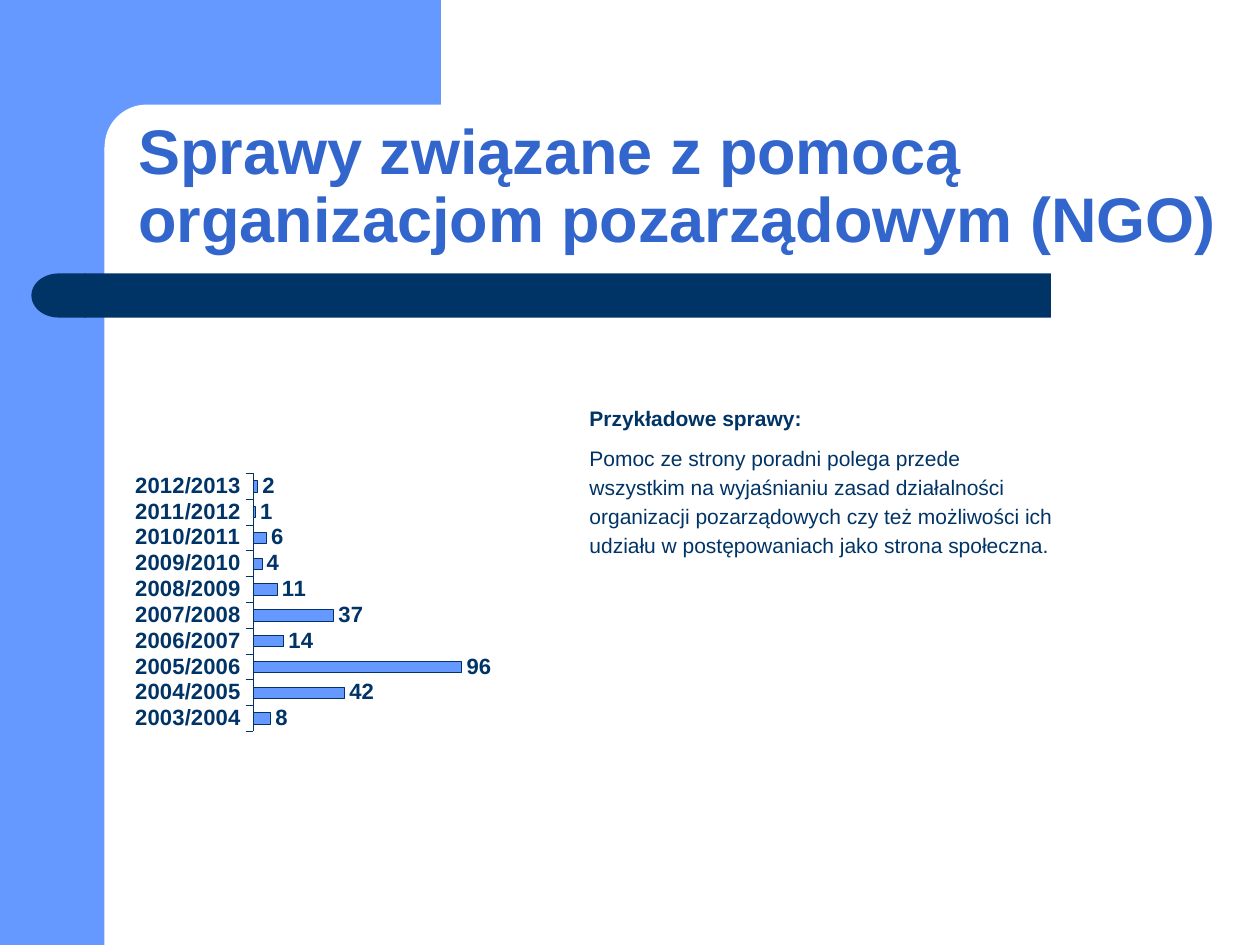
from dataclasses import dataclass

from lxml import etree
from pptx import Presentation
from pptx import util as u
from pptx.chart.data import CategoryChartData
from pptx.dml.color import RGBColor
from pptx.enum import chart as charts, shapes, text
from pptx.oxml import parse_xml
from pptx.oxml.ns import nsdecls

SKY = RGBColor(0x66, 0x99, 0xFF)
NAVY = RGBColor(0x00, 0x33, 0x66)
BLUE = RGBColor(0x33, 0x66, 0xCC)
WHITE = RGBColor(0xFF, 0xFF, 0xFF)
FONT = "Arial"
TITLE = "Sprawy związane z pomocą organizacjom pozarządowym (NGO)"
EXAMPLES_HEADING = "Przykładowe sprawy:"
EXAMPLES = (
    "Pomoc ze strony poradni polega przede wszystkim na wyjaśnianiu zasad "
    "działalności organizacji pozarządowych czy też możliwości ich udziału "
    "w postępowaniach jako strona społeczna."
)
FIRST_YEAR = 2003
CASES = (8, 42, 96, 14, 37, 11, 4, 6, 1, 2)


@dataclass(frozen=True)
class Panel:
    """A plain filled shape of the background."""

    kind: shapes.MSO_SHAPE
    box: tuple[float, float, float, float]
    color: RGBColor
    corner: float | None = None
    mirrored: bool = False


PANELS = (
    Panel(shapes.MSO_SHAPE.RECTANGLE, (0, 0, 0.83, 7.5), SKY),
    Panel(shapes.MSO_SHAPE.RECTANGLE, (0.75, 0, 2.75, 1.17), SKY),
    Panel(shapes.MSO_SHAPE.ROUNDED_RECTANGLE, (0.83, 0.83, 5.58, 0.67), WHITE, corner=0.5),
    Panel(shapes.MSO_SHAPE.ROUNDED_RECTANGLE, (0.67, 2.17, 7.67, 0.35), NAVY, corner=0),
    Panel(shapes.MSO_SHAPE.FLOWCHART_DELAY, (0.25, 2.17, 0.43, 0.35), NAVY, mirrored=True),
)


def inches(box: tuple[float, float, float, float]) -> list[u.Length]:
    """Turn left, top, width and height into lengths."""
    return [u.Inches(value) for value in box]


def style(font, size: float, color: RGBColor, bold: bool) -> None:
    """Set the look of a font."""
    font.name, font.size, font.bold = FONT, u.Pt(size), bold
    font.color.rgb = color


def draw_panel(slide, panel: Panel) -> None:
    """Draw one background shape."""
    shape = slide.shapes.add_shape(panel.kind, *inches(panel.box))
    shape.shadow.inherit = False
    shape.fill.solid()
    shape.fill.fore_color.rgb = panel.color
    shape.line.fill.background()
    if panel.corner is not None:
        shape.adjustments[0] = panel.corner
    if panel.mirrored:
        shape.element.spPr.xfrm.set("flipH", "1")


def draw_title(slide) -> None:
    """Draw the slide heading."""
    frame = slide.shapes.add_textbox(*inches((1, 0.83, 9, 1.25))).text_frame
    frame.word_wrap = True
    frame.vertical_anchor = text.MSO_ANCHOR.BOTTOM
    frame.text = TITLE
    para = frame.paragraphs[0]
    para.line_spacing = 0.9
    style(para.runs[0].font, 36, BLUE, True)


def draw_examples(slide) -> None:
    """Draw the text beside the chart."""
    frame = slide.shapes.add_textbox(*inches((4.58, 3.17, 3.88, 1.29))).text_frame
    frame.word_wrap = True
    frame.text = EXAMPLES_HEADING
    style(frame.paragraphs[0].runs[0].font, 12, NAVY, True)
    para = frame.add_paragraph()
    para.text = EXAMPLES
    para.line_spacing = 1.15
    para.space_before = u.Pt(6)
    style(para.runs[0].font, 12, NAVY, False)


def place_plot(chart, box: tuple[float, float, float, float]) -> None:
    """Fix the inner plot area as fractions of the chart."""
    layout = parse_xml(
        f'<c:layout {nsdecls("c")}><c:manualLayout><c:layoutTarget val="inner"/>'
        '<c:xMode val="edge"/><c:yMode val="edge"/></c:manualLayout></c:layout>'
    )
    manual = layout[0]
    for name, value in zip("xywh", box):
        etree.SubElement(manual, f"{{{manual.nsmap['c']}}}{name}").set("val", str(value))
    area = chart.element.chart.plotArea
    for old in area.findall(layout.tag):
        area.remove(old)
    area.insert(0, layout)


def draw_chart(slide) -> None:
    """Draw the yearly number of cases."""
    data = CategoryChartData()
    data.categories = [f"{year}/{year + 1}" for year in range(FIRST_YEAR, FIRST_YEAR + len(CASES))]
    data.add_series("Series 1", CASES)
    chart = slide.shapes.add_chart(
        charts.XL_CHART_TYPE.BAR_CLUSTERED, *inches((0.99, 3.57, 3.6, 2.39)), data
    ).chart
    chart.has_legend = chart.has_title = False
    style(chart.font, 12.6, NAVY, True)
    place_plot(chart, (0.283, 0.078, 0.575, 0.857))

    values = chart.value_axis
    values.visible = values.has_major_gridlines = False
    values.minimum_scale, values.maximum_scale = 0, 120
    years = chart.category_axis
    years.major_tick_mark = charts.XL_TICK_MARK.OUTSIDE
    years.format.line.color.rgb = NAVY
    years.format.line.width = u.Pt(0.18)
    style(years.tick_labels.font, 12.6, NAVY, True)

    plot = chart.plots[0]
    plot.vary_by_categories = False
    plot.gap_width = 130
    bars = plot.series[0]
    bars.format.fill.solid()
    bars.format.fill.fore_color.rgb = SKY
    bars.format.line.color.rgb = NAVY
    bars.format.line.width = u.Pt(0.25)
    labels = bars.data_labels
    labels.show_value = True
    labels.position = charts.XL_LABEL_POSITION.OUTSIDE_END
    style(labels.font, 12.6, NAVY, True)


def main() -> None:
    """Build and save the deck."""
    deck = Presentation()
    deck.slide_width, deck.slide_height = u.Inches(10), u.Inches(7.5)
    slide = deck.slides.add_slide(deck.slide_layouts[6])
    for panel in PANELS:
        draw_panel(slide, panel)
    draw_title(slide)
    draw_examples(slide)
    draw_chart(slide)
    deck.save("out.pptx")


if __name__ == "__main__":
    main()
